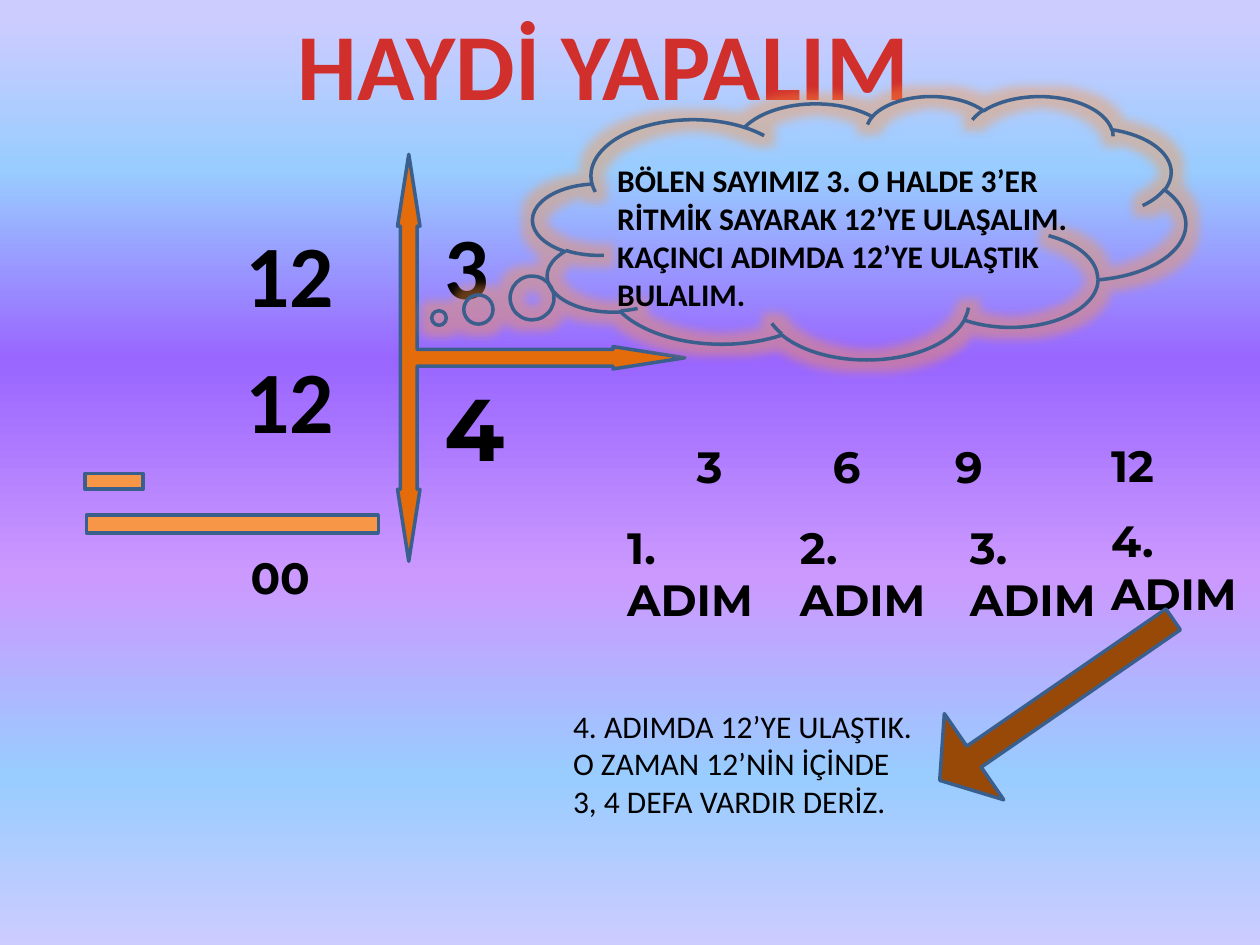
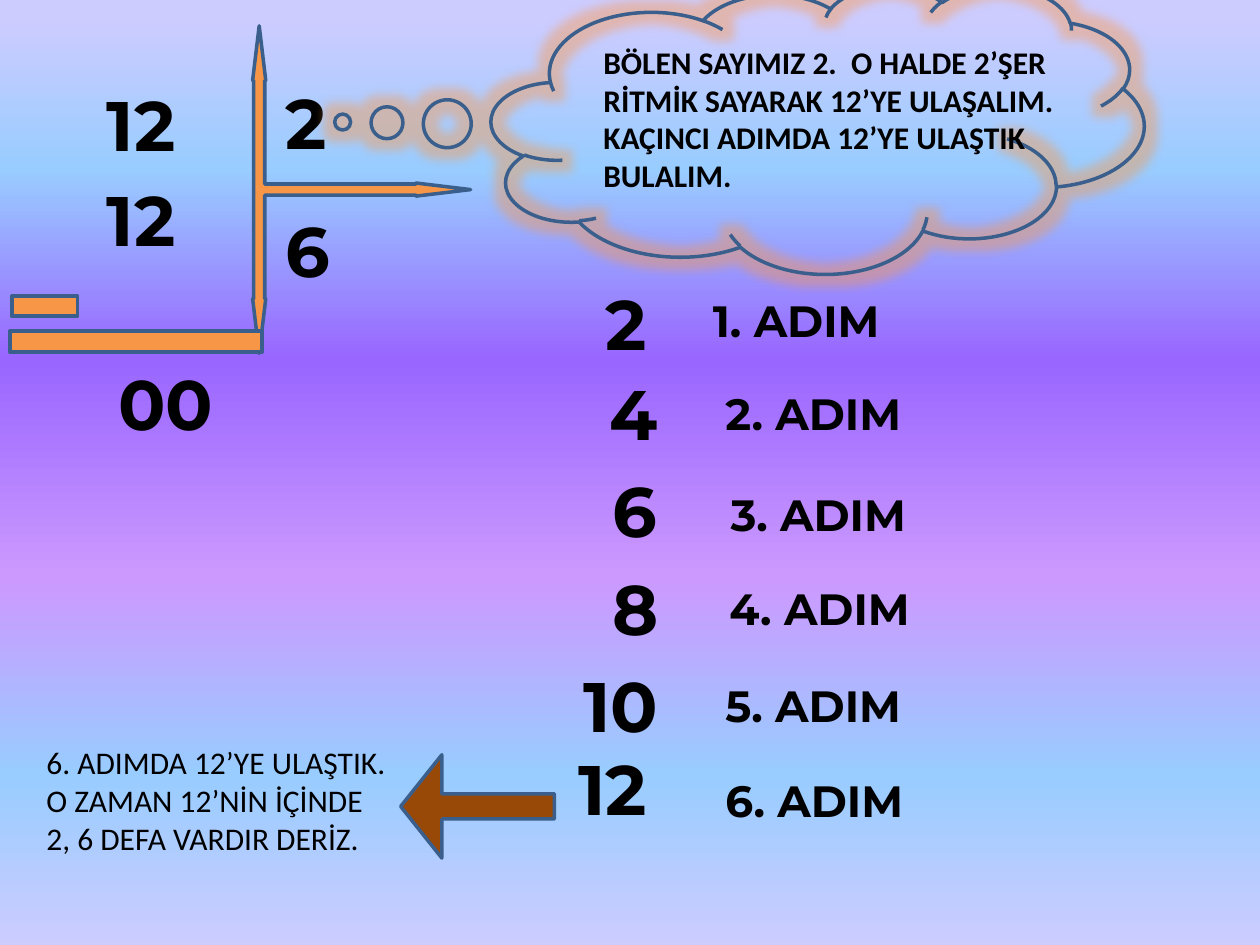
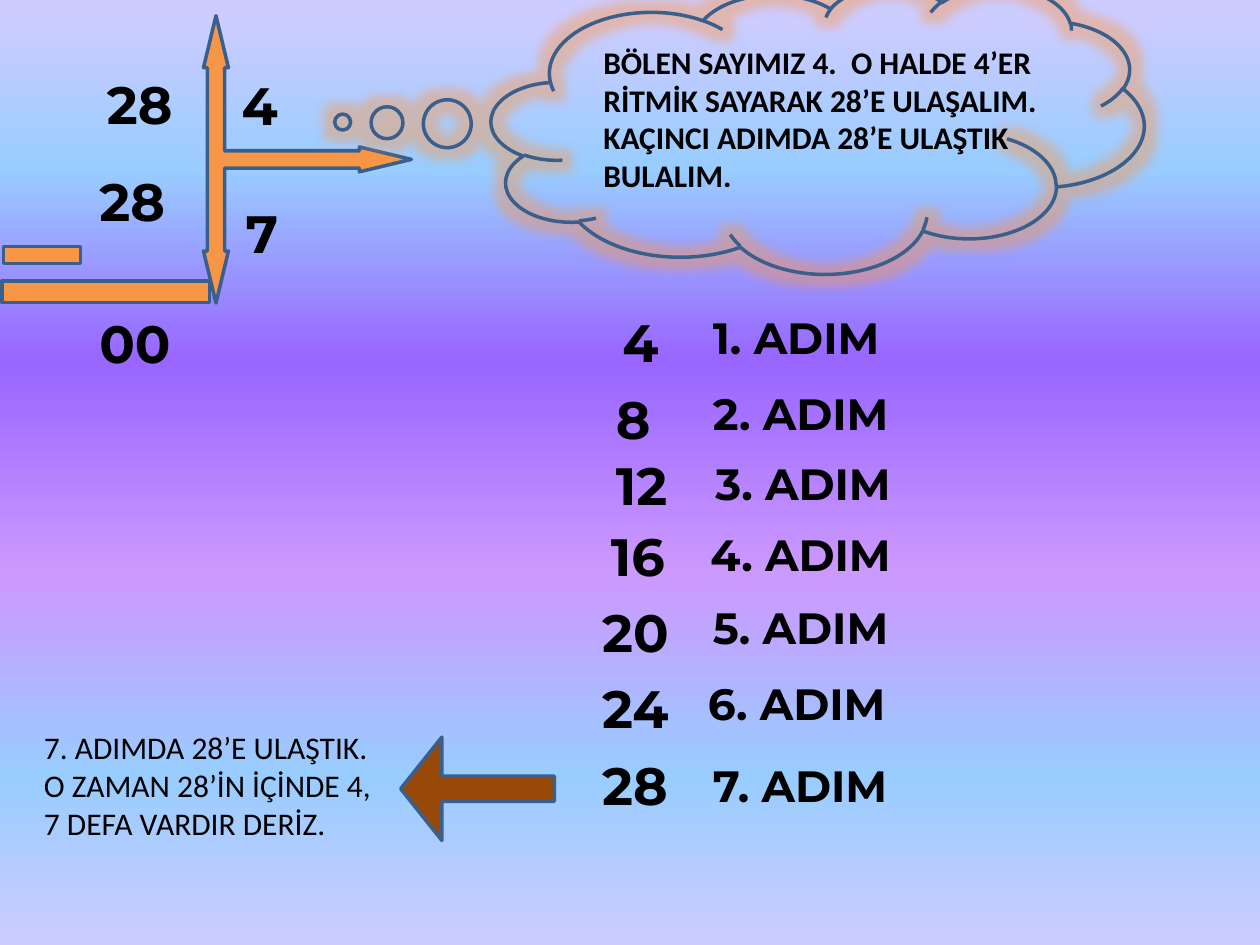
"""Build three slides that teach division by counting in steps."""
from dataclasses import dataclass

from lxml import etree
from pptx import Presentation
from pptx.dml.color import RGBColor
from pptx.enum.shapes import MSO_SHAPE
from pptx.enum.text import MSO_ANCHOR, MSO_AUTO_SIZE, PP_ALIGN
from pptx.oxml.ns import qn
from pptx.util import Inches, Pt

CROSS = MSO_SHAPE.LEFT_RIGHT_UP_ARROW
CLOUD = MSO_SHAPE.CLOUD_CALLOUT
ARROW = MSO_SHAPE.DOWN_ARROW
MINUS = MSO_SHAPE.MATH_MINUS
FIT = MSO_AUTO_SIZE.SHAPE_TO_FIT_TEXT
TOP = MSO_ANCHOR.TOP
CENTER = PP_ALIGN.CENTER
COLS, ROWS = 100, 75


@dataclass(frozen=True)
class Theme:
    """Colours, fonts and type sizes."""
    ink: str = "000000"
    edge: str = "3A5F8C"
    bar: str = "F79646"
    dark: str = "E46C0A"
    brown: str = "984807"
    sky: tuple = ((0, "CCCCFF"), (2, "CCCCFF"), (18, "99CCFF"), (38, "9966FF"),
                  (61, "CC99FF"), (82, "99CCFF"), (100, "CCCCFF"))
    red: tuple = ((0, "FC7C7A"), (75, "D02F2C"), (100, "C70500"))
    plain: str = "Calibri"
    bold: str = "Montserrat"
    head: int = 54
    step: int = 25
    note: int = 18
    line: int = 2
    glow: int = 11


@dataclass(frozen=True)
class Sum:
    """One division, its word endings and the places of its parts."""
    whole: int
    base: int
    tails: tuple
    size: int
    digits: dict
    cross: tuple
    tips: tuple
    cloud: tuple
    tail: tuple
    hint: tuple
    steps: tuple
    widths: tuple
    label: tuple
    arrow: tuple
    answer: tuple
    bars: tuple
    fill: str = Theme.bar
    turn: float = 90
    gap: str = "  "
    plain: tuple = ()
    zero: int = 0
    title: str = ""


class Deck:
    """Style, presentation and current slide."""

    def __init__(self, theme):
        self.theme = theme
        self.file = Presentation()
        self.file.slide_width, self.file.slide_height = Inches(10), Inches(7.5)
        self.col = self.file.slide_width / COLS
        self.row = self.file.slide_height / ROWS
        master = self.file.slide_master
        self.blend(master.background.fill, master.element, theme.sky)

    def blend(self, fill, root, stops):
        """Fill from top to bottom through the stops."""
        fill.gradient()
        fill.gradient_angle = 270
        group = next(root.iter(qn("a:gsLst")))
        for old in list(group):
            group.remove(old)
        for spot, tint in stops:
            stop = etree.SubElement(group, qn("a:gs"), pos=str(spot * 1000))
            etree.SubElement(stop, qn("a:srgbClr"), val=tint)

    def box(self, x, y, w, h):
        """Turn columns and rows into lengths."""
        return [round(v) for v in (x * self.col, y * self.row, w * self.col, h * self.row)]

    def tall(self, size, lines):
        """Give the rows that lines of text fill."""
        return 1 + lines * size / 6

    def page(self, title):
        """Start a slide, with a title if there is one."""
        layout = self.file.slide_layouts[5 if title else 6]
        self.slide = self.file.slides.add_slide(layout)
        if title:
            self.title(title)

    def title(self, words):
        """Write the slide title."""
        look = self.theme
        shape = self.slide.shapes.title
        shape.left, shape.top, shape.width, shape.height = self.box(
            22.4, 0, 51, self.tall(look.head, 1))
        frame = shape.text_frame
        frame.text = words
        frame.word_wrap = False
        frame.auto_size = FIT
        frame.vertical_anchor = TOP
        para = frame.paragraphs[0]
        para.alignment = CENTER
        font = para.font
        font.name, font.size, font.bold = look.plain, Pt(look.head), True
        self.blend(font.fill, shape.element, look.red)

    def text(self, words, spot, wide, size, face=None, lines=1, bold=True):
        """Write a text box whose height follows its lines."""
        look = self.theme
        area = self.box(*spot, wide, self.tall(size, lines))
        frame = self.slide.shapes.add_textbox(*area).text_frame
        frame.word_wrap = True
        frame.auto_size = FIT
        para = frame.paragraphs[0]
        para.text = str(words)
        font = para.font
        font.name, font.size, font.bold = face or look.bold, Pt(size), bold
        font.color.rgb = RGBColor.from_string(look.ink)

    def shape(self, kind, area, fill=None, turn=0, tune=()):
        """Draw an outlined preset shape."""
        shape = self.slide.shapes.add_shape(kind, *self.box(*area))
        shape.shadow.inherit = False
        shape.rotation = turn
        for i, value in enumerate(tune):
            shape.adjustments[i] = value
        if fill:
            shape.fill.solid()
            shape.fill.fore_color.rgb = RGBColor.from_string(fill)
        else:
            shape.fill.background()
        shape.line.color.rgb = RGBColor.from_string(self.theme.edge)
        shape.line.width = Pt(self.theme.line)
        return shape

    def cloud(self, area, tail):
        """Draw a glowing thought cloud."""
        shape = self.shape(CLOUD, area, tune=tail)
        effects = shape.element.spPr.find(qn("a:effectLst"))
        glow = etree.SubElement(effects, qn("a:glow"), rad=str(Pt(self.theme.glow)))
        tint = etree.SubElement(glow, qn("a:srgbClr"), val=self.theme.bar)
        etree.SubElement(tint, qn("a:satMod"), val="175000")
        etree.SubElement(tint, qn("a:alpha"), val="40000")

    def digit(self, work, name, words, size=0):
        """Write one number of the division."""
        x, y, wide = work.digits[name]
        face = self.theme.plain if name in work.plain else None
        self.text(words, (x, y), wide, size or work.size, face)

    def lesson(self, work):
        """Lay out one worked division."""
        look = self.theme
        n, d, q = work.whole, work.base, work.whole // work.base
        er, to, of = work.tails
        self.page(work.title)
        self.digit(work, "whole", n)
        self.shape(CROSS, work.cross, work.fill, 90, work.tips)
        self.digit(work, "base", d)
        self.cloud(work.cloud, work.tail)
        self.text(f"BÖLEN SAYIMIZ {d}.{work.gap}O HALDE {d}’{er} RİTMİK SAYARAK "
                  f"{n}’{to} ULAŞALIM. KAÇINCI ADIMDA {n}’{to} ULAŞTIK BULALIM.",
                  work.hint, 41.4, look.note, look.plain, 4)
        size = work.zero or work.size
        wide, lines = work.label
        for i, (x, y, left, top) in enumerate(work.steps, 1):
            count = str(i * d)
            self.text(count, (x, y), work.widths[len(count) - 1], size)
            self.text(f"{i}. ADIM", (left, top), wide, look.step, lines=lines)
        self.shape(ARROW, work.arrow, look.brown, work.turn, (0.243, 0.398))
        self.text(f"{q}. ADIMDA {n}’{to} ULAŞTIK. O ZAMAN {n}’{of} İÇİNDE "
                  f"{d}, {q} DEFA VARDIR DERİZ.",
                  work.answer, 29, look.note, look.plain, 3, False)
        self.digit(work, "times", q)
        self.digit(work, "again", n)
        for bar in work.bars:
            self.shape(MINUS, bar, look.bar)
        self.digit(work, "rest", "00", size)


FIRST = Sum(
    12, 3, ("ER", "YE", "NİN"), 50, title="HAYDİ YAPALIM", gap=" ",
    digits={"whole": (18.5, 17, 11.8), "base": (34.3, 16.3, 8.7),
            "times": (34.3, 29.2, 7.1), "again": (18.5, 27, 10.6),
            "rest": (18.9, 43.2, 7.1)},
    plain=("whole", "base", "again"), zero=25, fill=Theme.dark,
    cross=(26.8, 17, 32.3, 22.8), tips=(0.058, 0.039, 0.25),
    cloud=(42.3, 7.6, 51.8, 20.9), tail=(-0.644, 0.344), hint=(48, 12.3),
    steps=((54.3, 34.4, 48.8, 40.8), (65.1, 34.4, 62.5, 40.8),
           (74.8, 34.4, 76, 40.8), (87.2, 34.3, 87.2, 40.3)),
    widths=(7.1, 7.1), label=(13, 2),
    arrow=(79.7, 44.3, 8.3, 22.5), turn=55.4, answer=(44.5, 55.6),
    bars=((2.7, 38.6, 31.5, 6), (5.9, 35.6, 6.3, 5.2)))

SECOND = Sum(
    12, 2, ("ŞER", "YE", "NİN"), 40,
    digits={"whole": (7.5, 6, 12.6), "base": (21.7, 5.8, 12.6),
            "times": (21.7, 16, 12.6), "again": (7.5, 13.5, 12.6),
            "rest": (8.4, 28.1, 12.6)},
    cross=(15.7, 6.4, 26, 17.3), tips=(0.051, 0.03, 0.25),
    cloud=(39, -1.1, 51.8, 22.8), tail=(-0.728, -0.027), hint=(46.9, 2.9),
    steps=((47.1, 21.8, 55.6, 22.8), (47.4, 28.9, 56.6, 30.2),
           (47.6, 36.6, 57, 38.2), (47.6, 44.4, 56.9, 45.7),
           (45.3, 52.1, 56.6, 53.4), (44.9, 58.7, 56.6, 60.9)),
    widths=(7.9, 10.4), label=(20.3, 1),
    arrow=(33.8, 57.9, 8.2, 12.2), answer=(2.7, 58.5),
    bars=((-2.8, 23.5, 27.2, 7.2), (0, 20.9, 7.1, 6.8)))

THIRD = Sum(
    28, 4, ("ER", "E", "İN"), 30,
    digits={"whole": (7.5, 5.2, 10.2), "base": (18.2, 5.3, 10.2),
            "times": (18.5, 15.5, 9.2), "again": (6.9, 12.9, 9.2),
            "rest": (6.9, 24.2, 9.2)},
    cross=(13, 4.4, 22.8, 16.5), tips=(0.083, 0.06, 0.25),
    cloud=SECOND.cloud, tail=SECOND.tail, hint=SECOND.hint,
    steps=((48.4, 24.1, 55.6, 24.2), (47.9, 30.2, 55.6, 30.2),
           (47.9, 35.5, 55.8, 35.8), (47.5, 41.1, 55.4, 41.4),
           (46.8, 47.1, 55.6, 47.2), (46.8, 53.2, 55.2, 53.2),
           (46.8, 59.3, 55.6, 59.7)),
    widths=(7.9, 7.9), label=SECOND.label,
    arrow=(33.8, 56.5, 8.2, 12.2), answer=(2.5, 57.3),
    bars=((-2.8, 19.5, 22.4, 7.3), (-0.8, 17.4, 8.3, 5.7)))


def main():
    """Build and save the lesson."""
    deck = Deck(Theme())
    for work in (FIRST, SECOND, THIRD):
        deck.lesson(work)
    deck.file.save("out.pptx")


if __name__ == "__main__":
    main()
